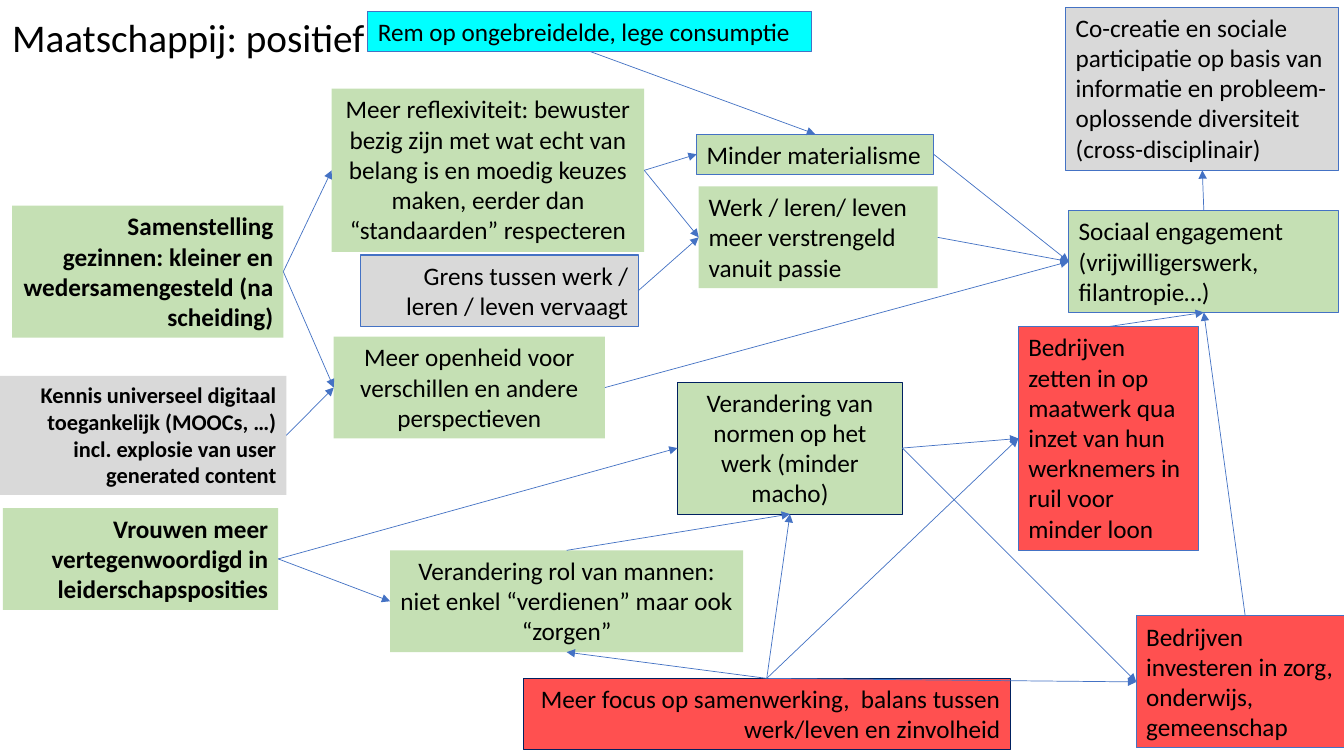
from dataclasses import dataclass
from enum import IntEnum

from lxml.etree import SubElement
from pptx import Presentation
from pptx.dml.color import RGBColor
from pptx.enum.shapes import MSO_CONNECTOR as Connector
from pptx.enum.text import MSO_ANCHOR as Anchor, MSO_AUTO_SIZE as AutoSize, PP_ALIGN as Align
from pptx.oxml.ns import qn
from pptx.shapes.autoshape import Shape
from pptx.slide import Slide
from pptx.util import Inches, Pt


@dataclass(frozen=True)
class Theme:
    font: str = "Calibri"
    text: str = "000000"
    green: str = "C5E0B4"
    grey: str = "D9D9D9"
    red: str = "FF5050"
    cyan: str = "00FFFF"
    blue: str = "4472C4"
    navy: str = "002060"
    title_size: int = 28
    body_size: int = 18
    small_size: int = 16
    border_width: float = 0.75
    arrow_width: float = 0.5


THEME = Theme()


class Side(IntEnum):
    """Connection sites of a rectangle."""
    TOP = 0
    LEFT = 1
    BOTTOM = 2
    RIGHT = 3


@dataclass(frozen=True)
class Factor:
    text: str
    left: float
    top: float
    width: float
    height: float
    fill: str = THEME.green
    border: str | None = None
    align: Align = Align.LEFT
    size: int = THEME.body_size
    bold: bool = False
    wrap: bool = True


@dataclass(frozen=True)
class Influence:
    cause: str
    cause_side: Side
    effect: str
    effect_side: Side


FACTORS = {
    "consumption": Factor("Rem op ongebreidelde, lege consumptie", 3.65, 0.11, 4.4, 0.4,
                          THEME.cyan, THEME.blue, wrap=False),
    "blurred": Factor("Grens tussen werk / leren / leven vervaagt", 3.58, 2.53, 2.75, 0.71,
                      THEME.grey, THEME.blue, Align.RIGHT),
    "women": Factor("Vrouwen meer vertegenwoordigd in leiderschapsposities",
                    0.03, 5.04, 2.73, 1.01, align=Align.RIGHT, bold=True),
    "norms": Factor("Verandering van normen op het werk (minder macho)",
                    6.72, 3.79, 2.23, 1.31, border=THEME.navy, align=Align.CENTER),
    "men": Factor("Verandering rol van mannen: niet enkel “verdienen” maar ook “zorgen”",
                  3.87, 5.46, 3.5, 1.01, align=Align.CENTER),
    "engagement": Factor("Sociaal engagement (vrijwilligerswerk, filantropie…)",
                         10.6, 2.09, 2.68, 1.01, border=THEME.blue),
    "cocreation": Factor("Co-creatie en sociale participatie op basis van informatie en "
                         "probleem-oplossende diversiteit (cross-disciplinair)",
                         10.57, 0.07, 2.71, 1.62, THEME.grey, THEME.blue),
    "families": Factor("Samenstelling gezinnen: kleiner en wedersamengesteld (na scheiding)",
                       0.12, 2.04, 2.69, 1.31, align=Align.RIGHT, bold=True),
    "reflexivity": Factor("Meer reflexiviteit: bewuster bezig zijn met wat echt van belang is en "
                          "moedig keuzes maken, eerder dan “standaarden” respecteren",
                          3.29, 0.88, 3.1, 1.62, align=Align.CENTER),
    "openness": Factor("Meer openheid voor verschillen en andere perspectieven",
                       3.31, 3.34, 2.69, 1.01, align=Align.CENTER),
    "passion": Factor("Werk / leren/ leven meer verstrengeld vanuit passie",
                      6.93, 1.85, 2.37, 1.01),
    "materialism": Factor("Minder materialisme", 6.91, 1.33, 2.35, 0.4,
                          border=THEME.blue, wrap=False),
    "knowledge": Factor("Kennis universeel digitaal toegankelijk (MOOCs, …) incl. explosie van "
                        "user generated content", -0.04, 3.73, 2.88, 1.18, THEME.grey,
                        align=Align.RIGHT, size=THEME.small_size, bold=True),
    "balance": Factor("Meer focus op samenwerking,  balans tussen werk/leven en zinvolheid",
                      5.19, 6.73, 4.83, 0.71, THEME.red, THEME.navy, Align.RIGHT),
    "custom": Factor("Bedrijven zetten in op maatwerk qua inzet van hun werknemers in ruil voor "
                     "minder loon", 10.1, 3.24, 1.79, 2.22, THEME.red, THEME.blue),
    "investment": Factor("Bedrijven investeren in zorg, onderwijs, gemeenschap",
                         11.27, 6.11, 2.16, 1.31, THEME.red, THEME.blue),
}

SIDEWAYS = [
    ("blurred", "passion"), ("women", "norms"), ("women", "men"),
    ("passion", "engagement"), ("openness", "engagement"), ("materialism", "engagement"),
    ("families", "reflexivity"), ("families", "openness"), ("reflexivity", "passion"),
    ("reflexivity", "materialism"), ("knowledge", "openness"),
    ("norms", "custom"), ("norms", "investment"),
]
UPWARD = [
    ("men", "norms"), ("custom", "engagement"), ("engagement", "cocreation"),
    ("investment", "engagement"), ("balance", "norms"), ("balance", "men"),
]
INFLUENCES = [
    *(Influence(cause, Side.RIGHT, effect, Side.LEFT) for cause, effect in SIDEWAYS),
    *(Influence(cause, Side.TOP, effect, Side.BOTTOM) for cause, effect in UPWARD),
    *(Influence("balance", Side.TOP, effect, Side.LEFT) for effect in ("investment", "custom")),
    Influence("consumption", Side.BOTTOM, "materialism", Side.TOP),
]


def apply_format(target: object, values: dict[str, object]) -> None:
    for name, value in values.items():
        setattr(target, name, value)


def write_text(shape: Shape, text: str, size: int, align: Align, bold: bool = False) -> None:
    paragraph = shape.text_frame.paragraphs[0]
    paragraph.alignment = align
    run = paragraph.add_run()
    run.text = text
    apply_format(run.font, {"name": THEME.font, "size": Pt(size), "bold": bold})
    run.font.color.rgb = RGBColor.from_string(THEME.text)


def draw_title(slide: Slide, text: str) -> None:
    title = slide.shapes.title
    apply_format(title, {"left": Inches(0.02), "top": Inches(-0.33),
                         "width": Inches(11.5), "height": Inches(1.45)})
    apply_format(title.text_frame, {"vertical_anchor": Anchor.MIDDLE, "word_wrap": True,
                                    "auto_size": AutoSize.NONE})
    write_text(title, text, THEME.title_size, Align.LEFT)
    title.text_frame.paragraphs[0].line_spacing = 0.9


def draw_factor(slide: Slide, factor: Factor) -> Shape:
    box = slide.shapes.add_textbox(Inches(factor.left), Inches(factor.top),
                                   Inches(factor.width), Inches(factor.height))
    box.fill.solid()
    box.fill.fore_color.rgb = RGBColor.from_string(factor.fill)
    if factor.border:
        box.line.color.rgb = RGBColor.from_string(factor.border)
        box.line.width = Pt(THEME.border_width)
    apply_format(box.text_frame, {"word_wrap": factor.wrap,
                                  "auto_size": AutoSize.SHAPE_TO_FIT_TEXT})
    write_text(box, factor.text, factor.size, factor.align, factor.bold)
    return box


def draw_influence(slide: Slide, influence: Influence, boxes: dict[str, Shape]) -> None:
    arrow = slide.shapes.add_connector(Connector.STRAIGHT, 0, 0, 0, 0)
    arrow.begin_connect(boxes[influence.cause], influence.cause_side.value)
    arrow.end_connect(boxes[influence.effect], influence.effect_side.value)
    arrow.line.color.rgb = RGBColor.from_string(THEME.blue)
    arrow.line.width = Pt(THEME.arrow_width)
    # Arrowhead, and an empty effect list against the shadow
    SubElement(arrow.line._get_or_add_ln(), qn("a:tailEnd"), type="triangle")
    SubElement(arrow._element.spPr, qn("a:effectLst"))


def main() -> None:
    deck = Presentation()
    apply_format(deck, {"slide_width": Inches(13.33), "slide_height": Inches(7.5)})
    title_only = deck.slide_layouts.get_by_name("Title Only")
    slide = deck.slides.add_slide(title_only)

    draw_title(slide, "Maatschappij: positief")
    # Factors first, so that the arrows lie on top
    boxes = {key: draw_factor(slide, factor) for key, factor in FACTORS.items()}
    for influence in INFLUENCES:
        draw_influence(slide, influence, boxes)

    deck.save("out.pptx")


if __name__ == "__main__":
    main()
